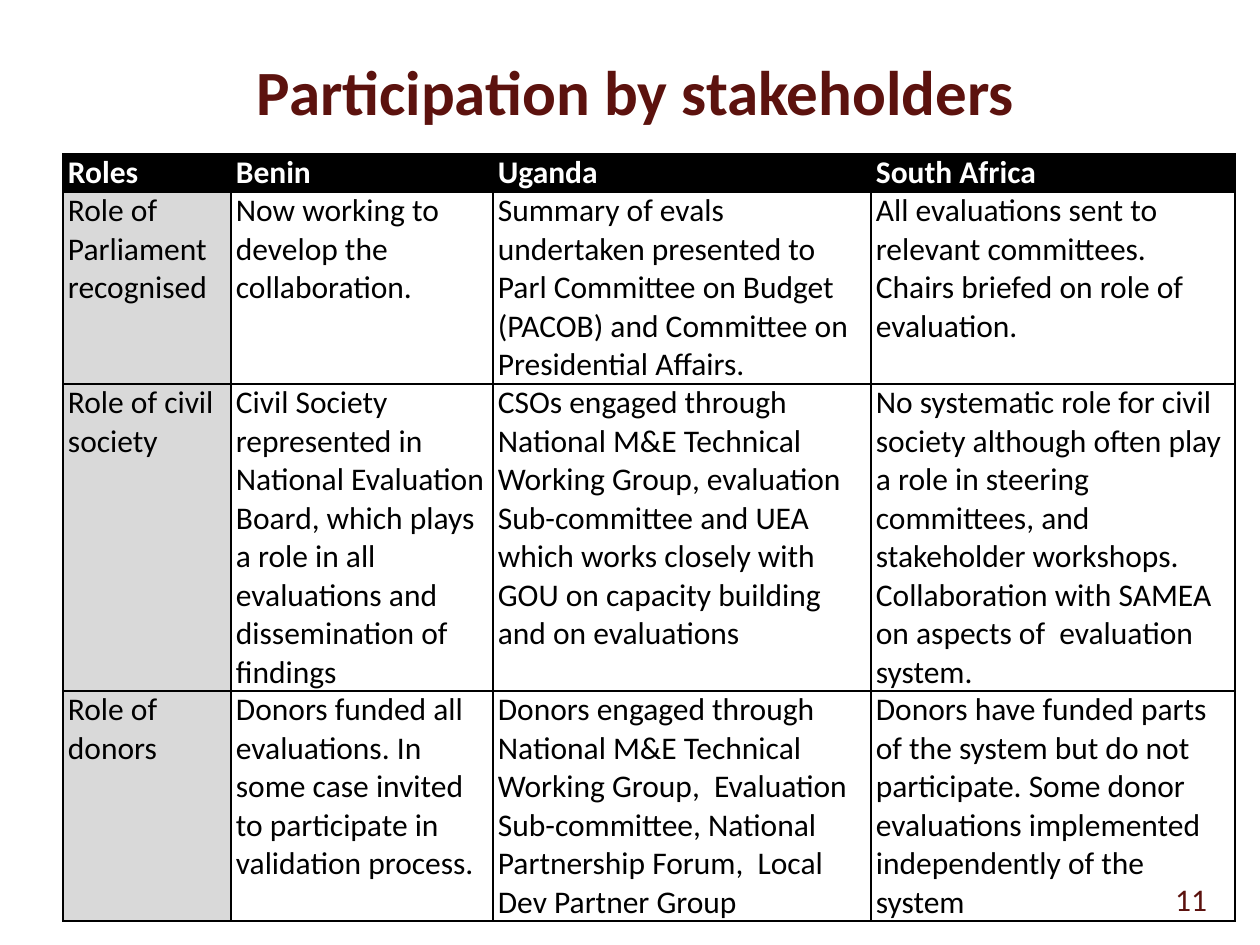
from lxml.etree import SubElement
from pptx import Presentation
from pptx.dml.color import RGBColor
from pptx.enum.text import MSO_ANCHOR as Anchor, PP_ALIGN as Align
from pptx.oxml.ns import qn
from pptx.util import Pt

EMU_PER_PX = 914400 / 126
FONT = "Calibri"
COLORS = {
    "maroon": "5C120E",
    "black": "000000",
    "white": "FFFFFF",
    "grey": "D9D9D9",
}
BORDER_WIDTH = Pt(1)

COLUMN_WIDTHS = [168, 262, 378, 364]
ROW_HEIGHTS = [38, 192, 307, 230]
ROLES = [
    ["Roles", "Benin", "Uganda", "South Africa"],
    [
        "Role of Parliament recognised",
        "Now working to develop the collaboration.",
        "Summary of evals undertaken presented to Parl Committee on Budget "
        "(PACOB) and Committee on Presidential Affairs.",
        "All evaluations sent to relevant committees. Chairs briefed on role "
        "of evaluation.",
    ],
    [
        "Role of civil society",
        "Civil Society represented in National Evaluation Board, which plays "
        "a role in all evaluations and dissemination of findings",
        "CSOs engaged through National M&E Technical Working Group, evaluation "
        "Sub-committee and UEA which works closely with GOU on capacity "
        "building and on evaluations",
        "No systematic role for civil society although often play a role in "
        "steering committees, and stakeholder workshops. Collaboration with "
        "SAMEA on aspects of  evaluation system.",
    ],
    [
        "Role of donors",
        "Donors funded all evaluations. In some case invited to participate "
        "in validation process.",
        "Donors engaged through National M&E Technical Working Group,  "
        "Evaluation Sub-committee, National Partnership Forum,  Local Dev "
        "Partner Group",
        "Donors have funded parts of the system but do not participate. Some "
        "donor evaluations implemented independently of the system",
    ],
]


def px(length):
    return round(length * EMU_PER_PX)


def rgb(name):
    return RGBColor.from_string(COLORS[name])


def set_all(target, values):
    for name, value in values.items():
        setattr(target, name, value)


def write(para, text, size, color, bold=False):
    span = para.add_run()
    span.text = text
    set_all(span.font, {"name": FONT, "size": Pt(size), "bold": bold})
    span.font.color.rgb = rgb(color)


def add_label(page, area, text, size, bold=False):
    box = page.shapes.add_textbox(*map(px, area))
    set_all(box.text_frame, {"word_wrap": True, "vertical_anchor": Anchor.MIDDLE})
    para = box.text_frame.paragraphs[0]
    para.alignment = Align.CENTER
    write(para, text, size, "maroon", bold)


def add_borders(cell):
    properties = cell._tc.get_or_add_tcPr()
    for side in ("lnL", "lnR", "lnT", "lnB"):
        line = SubElement(properties, qn(f"a:{side}"), w=str(BORDER_WIDTH))
        fill = SubElement(line, qn("a:solidFill"))
        SubElement(fill, qn("a:srgbClr"), val=COLORS["black"])


def fill_cell(cell, text, fill, color, bold):
    set_all(cell, {
        "margin_left": px(5), "margin_right": px(5),
        "margin_top": 0, "margin_bottom": 0,
        "vertical_anchor": Anchor.TOP,
    })
    add_borders(cell)
    if fill:
        cell.fill.solid()
        cell.fill.fore_color.rgb = rgb(fill)
    else:
        cell.fill.background()
    write(cell.text_frame.paragraphs[0], text, 18, color, bold)


def add_roles_table(page, left, top):
    area = (left, top, sum(COLUMN_WIDTHS), sum(ROW_HEIGHTS))
    table = page.shapes.add_table(
        len(ROLES), len(COLUMN_WIDTHS), *map(px, area)).table
    set_all(table, {"first_row": False, "horz_banding": False})
    for column, width in zip(table.columns, COLUMN_WIDTHS):
        column.width = px(width)
    for row, height in zip(table.rows, ROW_HEIGHTS):
        row.height = px(height)

    for r, texts in enumerate(ROLES):
        for c, text in enumerate(texts):
            header = r == 0
            fill = "black" if header else "grey" if c == 0 else None
            color = "white" if header else "black"
            fill_cell(table.cell(r, c), text, fill, color, header)


def main():
    deck = Presentation()
    set_all(deck, {"slide_width": px(1260), "slide_height": px(945)})
    page = deck.slides.add_slide(deck.slide_layouts[6])

    # Title and page number
    add_label(page, (35, 25, 1201, 130), "Participation by stakeholders", 36, True)
    add_label(page, (1144, 871, 94, 55), "11", 18)

    # Stakeholder roles by country
    add_roles_table(page, 63, 154)

    deck.save("out.pptx")


if __name__ == "__main__":
    main()
